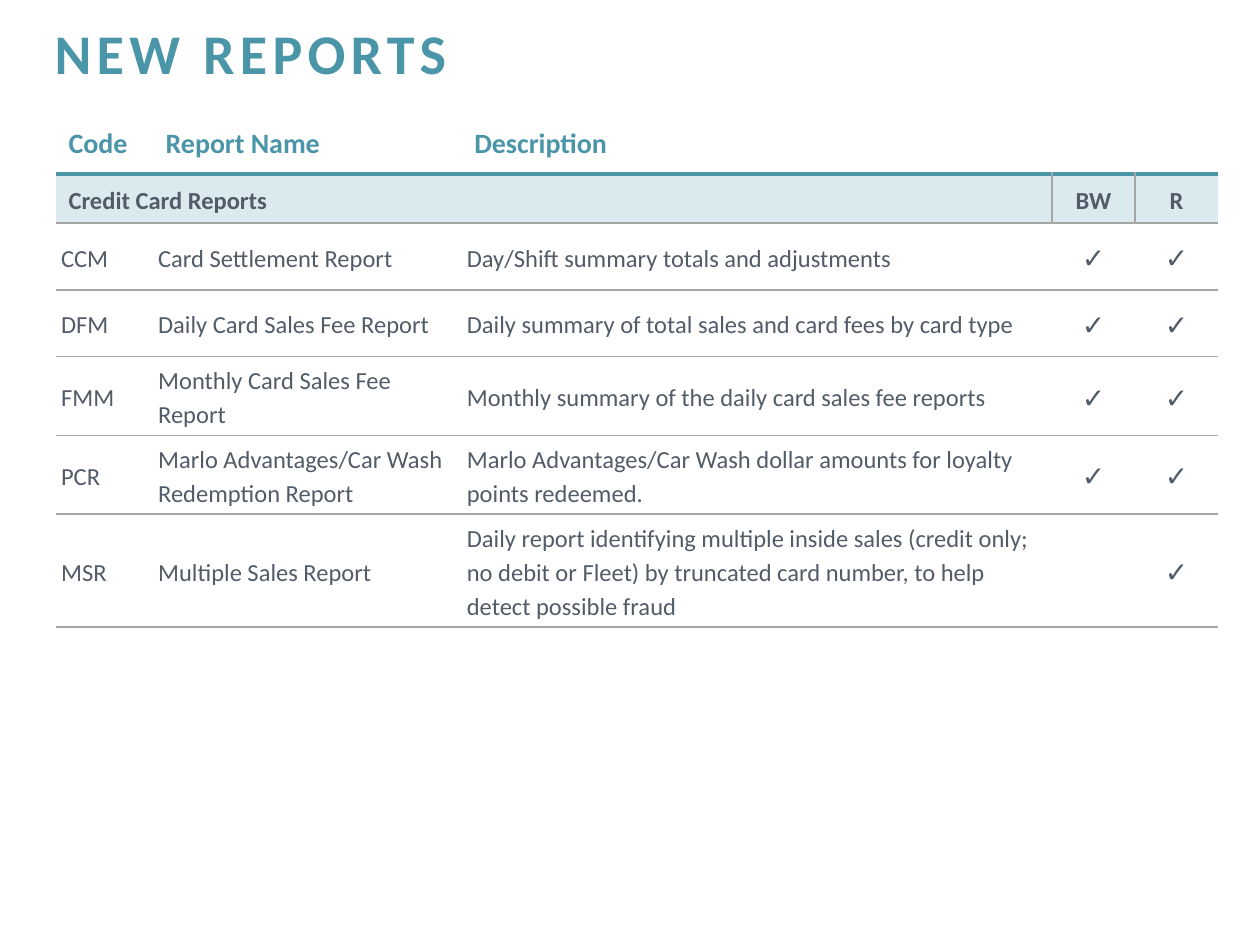
import pptx
import pptx.dml.color
import pptx.enum.text
import pptx.oxml
import pptx.oxml.ns
import pptx.util

Pt = pptx.util.Pt
RGB = pptx.dml.color.RGBColor.from_string
ALIGN = pptx.enum.text.PP_ALIGN
ANCHOR = pptx.enum.text.MSO_ANCHOR

COLORS = {"teal": "4B95A9", "slate": "525B68", "band": "DAEAEF", "rule": "A6A6A6"}
FONT = "Calibri"
WIDTHS = [55.5, 176.4, 337.3, 47.4, 47.4]
HEIGHTS = [34, 28, 38.2, 38.2, 45, 45, 64.3]
CHECK = "✓"
ROWS = [
    ["Code", "Report Name", "Description", "", ""],
    ["Credit Card Reports", "", "", "BW", "R"],
    ["CCM", "Card Settlement Report", "Day/Shift summary totals and adjustments", CHECK, CHECK],
    ["DFM", "Daily Card Sales Fee Report",
     "Daily summary of total sales and card fees by card type", CHECK, CHECK],
    ["FMM", "Monthly Card Sales Fee Report",
     "Monthly summary of the daily card sales fee reports", CHECK, CHECK],
    ["PCR", "Marlo Advantages/Car Wash Redemption Report",
     "Marlo Advantages/Car Wash dollar amounts for loyalty points redeemed.", CHECK, CHECK],
    ["MSR", "Multiple Sales Report",
     "Daily report identifying multiple inside sales (credit only; no debit or Fleet) "
     "by truncated card number, to help detect possible fraud", "", CHECK],
]


def add_span(para, text, size, color, bold):
    span = para.add_run()
    span.text = text
    span.font.name = FONT
    span.font.size = Pt(size)
    span.font.bold = bold
    span.font.color.rgb = RGB(COLORS[color])
    return span


def set_border(cell, side, line):
    if line:
        color, width = line
        paint = f'<a:solidFill><a:srgbClr val="{COLORS[color]}"/></a:solidFill>'
    else:
        width, paint = 0, "<a:noFill/>"
    cell._tc.get_or_add_tcPr().append(pptx.oxml.parse_xml(
        f'<a:ln{side} {pptx.oxml.ns.nsdecls("a")} w="{Pt(width)}">{paint}</a:ln{side}>'))


deck = pptx.Presentation()
deck.slide_width, deck.slide_height = Pt(720), Pt(540)
page = deck.slides.add_slide(deck.slide_layouts[5])

title = page.shapes.title
title.left, title.top, title.width, title.height = Pt(24), Pt(14.4), Pt(693.4), Pt(68.4)
title.text_frame.vertical_anchor = ANCHOR.TOP
title.text_frame.auto_size = pptx.enum.text.MSO_AUTO_SIZE.NONE
para = title.text_frame.paragraphs[0]
para.alignment = ALIGN.LEFT
para.line_spacing = 0.8
span = add_span(para, "NEW REPORTS", 32, "teal", True)
span.font._element.set("spc", "300")

frame = page.shapes.add_table(len(ROWS), len(WIDTHS), Pt(32), Pt(65.5),
                              Pt(sum(WIDTHS)), Pt(sum(HEIGHTS)))
table = frame.table
table.first_row = False
table.horz_banding = False
for column, width in zip(table.columns, WIDTHS):
    column.width = Pt(width)
for row, height in zip(table.rows, HEIGHTS):
    row.height = Pt(height)
table.cell(1, 0).merge(table.cell(1, 2))

rule, heavy = ("rule", 1), ("teal", 3)
for r, texts in enumerate(ROWS):
    header, group = r == 0, r == 1
    for c, text in enumerate(texts):
        cell = table.cell(r, c)
        set_border(cell, "L", rule if group and c >= 3 else None)
        set_border(cell, "R", rule if group and c in (0, 2, 3) else None)
        set_border(cell, "T", None if header else heavy if group else rule)
        set_border(cell, "B", heavy if header else rule)
        if group:
            cell.fill.solid()
            cell.fill.fore_color.rgb = RGB(COLORS["band"])
        else:
            cell.fill.background()
            inset = Pt(7.2 if header and text else 2.9)
            cell.margin_left = cell.margin_right = inset
            cell.margin_top = cell.margin_bottom = inset
        cell.vertical_anchor = ANCHOR.BOTTOM if header else ANCHOR.MIDDLE
        if not text:
            continue
        para = cell.text_frame.paragraphs[0]
        para.alignment = ALIGN.CENTER if c >= 3 else ALIGN.LEFT
        para.line_spacing = 1.0 if header else 1.15
        add_span(para, text, 16 if header or text == CHECK else 14,
                 "teal" if header else "slate", header or group)

deck.save("out.pptx")
